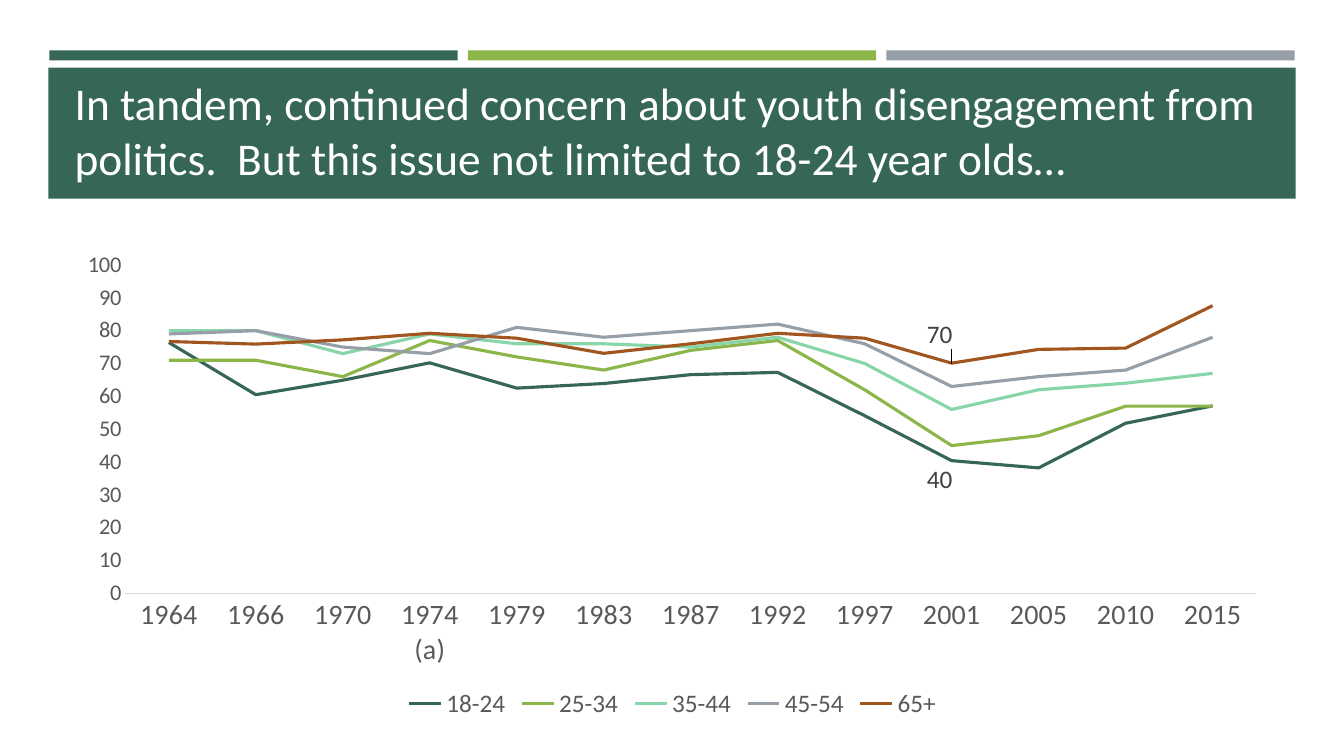
from lxml.etree import SubElement as Sub
from pptx import Presentation
from pptx.chart.data import CategoryChartData as Data
from pptx.dml.color import RGBColor as Rgb
from pptx.enum.chart import XL_CHART_TYPE as Kind, XL_LABEL_POSITION as Spot
from pptx.enum.chart import XL_LEGEND_POSITION as Side, XL_TICK_MARK as Tick
from pptx.enum.shapes import MSO_SHAPE as Form
from pptx.enum.text import MSO_ANCHOR as Anchor, MSO_AUTO_SIZE as Fit, PP_ALIGN as Align
from pptx.oxml.ns import qn
from pptx.util import Inches, Pt

HUES = {
    "pine": "366658", "leaf": "8CB64A", "mint": "88D5A9", "slate": "969FA7",
    "rust": "A1561F", "white": "FFFFFF", "text": "595959", "dark": "404040",
    "rule": "D9D9D9", "black": "000000",
}
YEARS = ["1964", "1966", "1970", "1974 (a)", "1979", "1983", "1987",
         "1992", "1997", "2001", "2005", "2010", "2015"]
AGES = [
    ("18-24", "pine", [76.4, 60.5, 64.9, 70.2, 62.5, 63.9, 66.6, 67.3, 54.1, 40.4, 38.2, 51.8, 57.1]),
    ("25-34", "leaf", [71, 71, 66, 77, 72, 68, 74, 77, 62, 45, 48, 57, 57]),
    ("35-44", "mint", [80, 80, 73, 79, 76, 76, 75, 78, 70, 56, 62, 64, 67]),
    ("45-54", "slate", [79, 80, 75, 73, 81, 78, 80, 82, 76, 63, 66, 68, 78]),
    ("65+", "rust", [76.7, 75.9, 77.2, 79.2, 77.7, 73.1, 76, 79.2, 77.7, 70.1, 74.3, 74.7, 87.6]),
]
LOW = YEARS.index("2001")
NOTES = {
    "18-24": (Spot.BELOW, {"x": -0.01, "y": 0}),
    "65+": (Spot.ABOVE, {"x": -0.01, "y": -0.02}),
}
PLOT = {"layoutTarget": "inner", "xMode": "edge", "yMode": "edge",
        "x": 0.05, "y": 0.05, "w": 0.93, "h": 0.68}


def apply(item, **vals):
    for key, val in vals.items():
        setattr(item, key, val)


def hue(name):
    return Rgb.from_string(HUES[name])


def place(node, slot, vals):
    for old in node.findall(qn("c:layout")):
        node.remove(old)
    frame = Sub(node, qn("c:layout"))
    node.insert(slot, frame)
    manual = Sub(frame, qn("c:manualLayout"))
    for key, val in vals.items():
        Sub(manual, qn(f"c:{key}")).set("val", str(val))


class Deck:
    face = "Calibri"

    def __init__(self):
        self.show = Presentation()
        apply(self.show, slide_width=Inches(13.33), slide_height=Inches(7.5))
        self.slide = self.show.slides.add_slide(self.show.slide_layouts[5])

    def font(self, font, size, color):
        apply(font, name=self.face, size=Pt(size))
        font.color.rgb = hue(color)

    def bar(self, box, color):
        bar = self.slide.shapes.add_shape(Form.RECTANGLE, *map(Inches, box))
        bar.shadow.inherit = False
        bar.fill.solid()
        bar.fill.fore_color.rgb = hue(color)
        bar.line.fill.background()

    def title(self, text, box):
        title = self.slide.shapes.title
        for key, val in zip(("left", "top", "width", "height"), box):
            setattr(title, key, Inches(val))
        title.element.getparent().append(title.element)
        frame = title.text_frame
        frame.text = text
        apply(frame, word_wrap=True, auto_size=Fit.NONE, vertical_anchor=Anchor.BOTTOM)
        line = frame.paragraphs[0]
        line.alignment = Align.LEFT
        self.font(line.runs[0].font, 32.4, "white")

    def axis(self, axis, size):
        apply(axis, has_major_gridlines=False, major_tick_mark=Tick.NONE,
              minor_tick_mark=Tick.NONE)
        self.font(axis.tick_labels.font, size, "text")

    def label(self, line, spot, shift):
        line.data_labels.show_value = False
        label = line.points[LOW].data_label
        self.font(label.font, 18, "dark")
        label.position = spot
        for node in line.data_labels._element.findall(qn("c:dLbl")):
            place(node, 1, shift)

    def chart(self, box):
        data = Data(number_format="0")
        data.categories = YEARS
        for name, _, vals in AGES:
            data.add_series(name, vals)
        chart = self.slide.shapes.add_chart(Kind.LINE, *map(Inches, box), data).chart
        self.font(chart.font, 10, "black")
        apply(chart, has_title=False, has_legend=True)
        apply(chart.legend, position=Side.BOTTOM, include_in_layout=False)
        self.font(chart.legend.font, 18, "text")
        self.axis(chart.category_axis, 20)
        rule = chart.category_axis.format.line
        rule.width = Pt(0.75)
        rule.color.rgb = hue("rule")
        scale = chart.value_axis
        self.axis(scale, 16)
        apply(scale, minimum_scale=0, maximum_scale=100, major_unit=10)
        apply(scale.tick_labels, number_format="0", number_format_is_linked=False)
        scale.format.line.fill.background()
        plot = chart.plots[0]
        plot.vary_by_categories = False
        for line, (name, color, _) in zip(plot.series, AGES):
            line.smooth = False
            line.format.line.width = Pt(2.25)
            line.format.line.color.rgb = hue(color)
            if name in NOTES:
                self.label(line, *NOTES[name])
        place(chart._chartSpace.find(".//" + qn("c:plotArea")), 0, PLOT)


def main():
    deck = Deck()
    for step, color in enumerate(("pine", "leaf", "slate")):
        deck.bar((0.49 + 4.15 * step, 0.5, 4.05, 0.1), color)
    deck.bar((0.48, 0.67, 12.37, 1.3), "pine")
    deck.title("In tandem, continued concern about youth disengagement from politics.  "
               "But this issue not limited to 18-24 year olds…", (0.64, 0.77, 12.06, 1.11))
    deck.chart((0.64, 2.39, 12.06, 4.79))
    deck.show.save("out.pptx")


if __name__ == "__main__":
    main()
